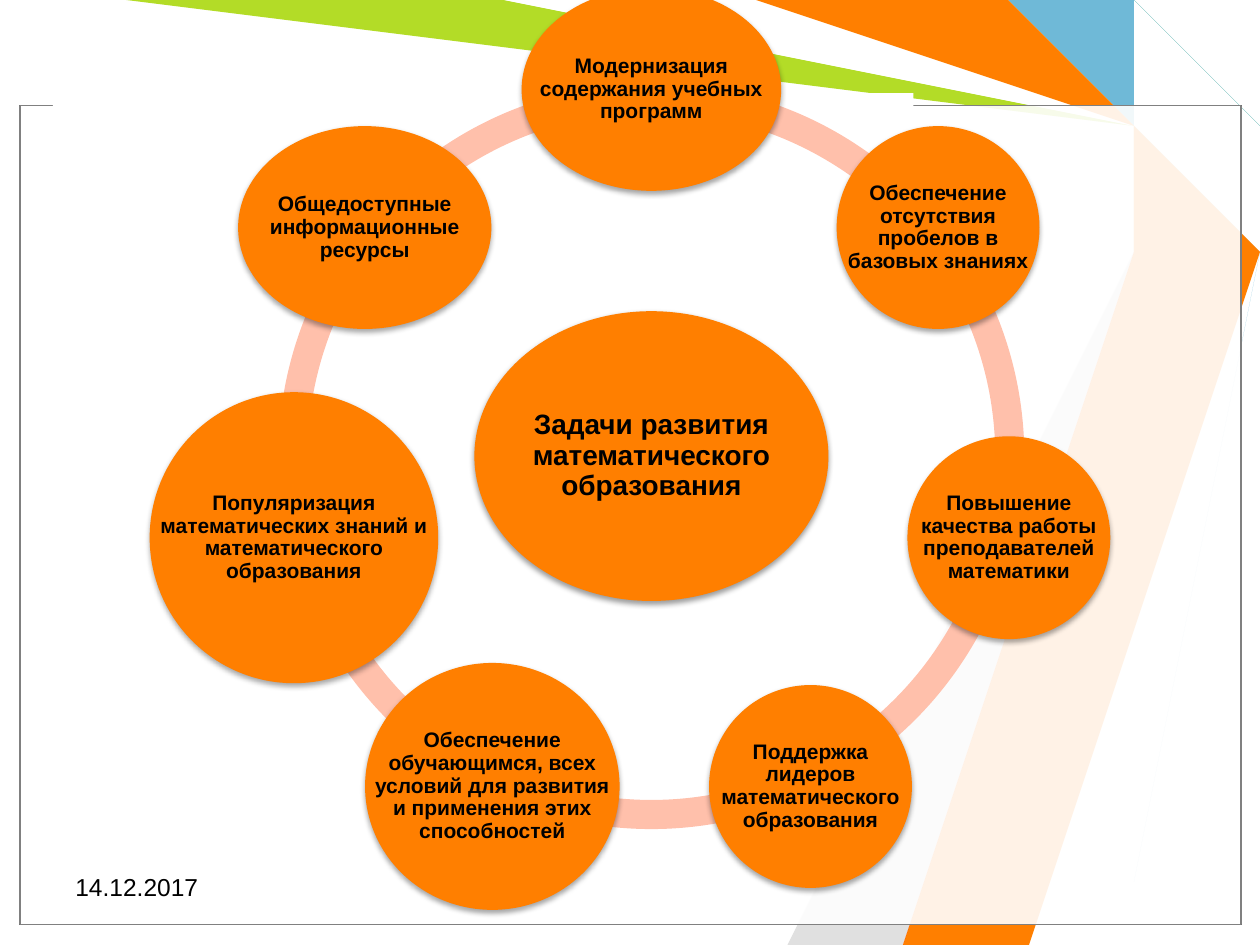
from math import cos, pi, sin

from lxml.etree import SubElement as Sub
from pptx import Presentation
from pptx.dml.color import RGBColor as Rgb
from pptx.enum.shapes import MSO_SHAPE as Form
from pptx.enum.text import MSO_ANCHOR as Anchor, PP_ALIGN as Align
from pptx.oxml.ns import qn
from pptx.util import Inches, Pt

COLS, ROWS = 10, 7.5
UNIT = Inches(1)
MID = (5.17, 3.62)
RING = 2.91
HUES = {
    "blue": "6FB9D7", "lime": "B3DC27", "gray": "E0E0E0", "white": "FFFFFF",
    "ice": "B4E3EE", "teal": "189180", "orange": "FF7F00", "red": "F93D17",
    "black": "000000", "edge": "808080", "peach": "FFC0AB",
}
RAYS = [
    ("blue", [(8.92, 0), (9.29, 0.77), (9.58, 1.67), (9.11, 7.49),
              (8.56, 7.49), (9.5, 1.67), (9.17, 0.75), (8.38, 0)]),
    ("lime", [(1.17, 0), (3.83, 0), (9.14, 0.78), (9.42, 1.69),
              (7.42, ROWS), (6.92, ROWS), (9.35, 1.73), (9.01, 0.91)]),
    ("gray", [(6.67, ROWS), (9.27, 1.81), (6, ROWS)]),
    ("white", [(3.75, 0), (9.1, 0.82), (9.32, 1.62), (6.75, ROWS),
               (7, ROWS), (9.41, 1.58), (9.17, 0.75), (6, 0)]),
    ("ice", [(9.25, 0), (9.17, 0.17), (9.78, 1.2), (COLS, 1.25),
             (COLS, 1), (9.25, 0.17), (9.32, 0)]),
    ("teal", [(COLS, 0.83), (9.42, 0.25), (COLS, 0.67)]),
    ("orange", [(6.08, 0), (7.92, 0), (9.3, 0.7), (9.66, 1.69),
                (8.33, ROWS), (7.33, ROWS), (9.42, 1.58), (9.17, 0.75)]),
    ("red", [(7.32, ROWS), (9.32, 1.83), (7.49, ROWS)]),
]
HUB = "Задачи развития математического образования"
TASKS = [
    ("Модернизация содержания учебных программ", 2.06, 1.61),
    ("Обеспечение отсутствия пробелов в базовых знаниях", 1.61, 1.61),
    ("Повышение качества работы преподавателей математики", 1.61, 1.61),
    ("Поддержка лидеров математического образования", 1.61, 1.61),
    ("Обеспечение обучающимся, всех условий для развития и применения "
     "этих способностей", 2.02, 1.96),
    ("Популяризация математических знаний и математического образования",
     2.29, 2.31),
    ("Общедоступные информационные ресурсы", 2.01, 1.61),
]


def hue(name):
    """Return the named colour."""
    return Rgb.from_string(HUES[name])


def grid(*cells):
    """Turn grid columns and rows into lengths."""
    return [int(cell * UNIT) for cell in cells]


def paint(shape, fill, line=None):
    """Set a flat fill and an optional thin outline."""
    shape.shadow.inherit = False
    shape.fill.solid()
    shape.fill.fore_color.rgb = hue(fill)
    if line:
        shape.line.color.rgb = hue(line)
        shape.line.width = Pt(0.75)
    else:
        shape.line.fill.background()
    return shape


def add(slide, form, area, fill, line=None):
    """Add a painted preset shape."""
    return paint(slide.shapes.add_shape(form, *grid(*area)), fill, line)


def ray(slide, fill, spots):
    """Draw one closed polygon."""
    pen = slide.shapes.build_freeform(*spots[0], scale=UNIT)
    pen.add_line_segments(spots[1:], close=True)
    paint(pen.convert_to_shape(), fill)


def veil(slide, line):
    """Add a see-through white frame."""
    pane = add(slide, Form.RECTANGLE, (0.16, 0.84, 9.69, 6.5), "white", line)
    tint = next(pane.fill._xPr.iter(qn("a:srgbClr")))
    Sub(tint, qn("a:alpha"), val="69000")


def shade(shape, blur, dist, alpha):
    """Drop a soft shadow straight down."""
    list_ = shape._element.spPr.find(qn("a:effectLst"))
    drop = Sub(list_, qn("a:outerShdw"), blurRad=str(Pt(blur)),
               dist=str(Pt(dist)), dir="5400000", rotWithShape="0")
    tint = Sub(drop, qn("a:srgbClr"), val=HUES["black"])
    Sub(tint, qn("a:alpha"), val=str(alpha * 1000))


def write(slide, text, area, size, bold=False):
    """Add a wrapped text box and return its frame."""
    frame = slide.shapes.add_textbox(*grid(*area)).text_frame
    frame.word_wrap = True
    para = frame.paragraphs[0]
    para.text = text
    look = {"name": "Arial", "size": Pt(size), "bold": bold}
    for key, val in look.items():
        setattr(para.font, key, val)
    para.font.color.rgb = hue("black")
    return frame


def node(slide, text, spot, wide, high, size=12, dist=1.8, alpha=35):
    """Add a shaded ellipse with a centred label."""
    area = (spot[0] - wide / 2, spot[1] - high / 2, wide, high)
    shade(add(slide, Form.OVAL, area, "orange"), 3.1, dist, alpha)
    frame = write(slide, text, area, size, True)
    frame.vertical_anchor = Anchor.MIDDLE
    for side in ("left", "right", "top", "bottom"):
        setattr(frame, f"margin_{side}", Inches(0.02))
    para = frame.paragraphs[0]
    para.alignment = Align.CENTER
    para.line_spacing = 0.9


def arc(slide, step):
    """Add the ring part that follows a node."""
    out = RING + 0.05
    area = (MID[0] - out, MID[1] - out, 2 * out, 2 * out)
    part = add(slide, Form.BLOCK_ARC, area, "peach")
    for i in (0, 1):
        turn = (270 + (step + i) * 360 / len(TASKS)) % 360
        part.adjustments[i] = turn * 0.6
    part.adjustments[2] = 0.039


def wheel(slide):
    """Draw the ring, the hub and the tasks around it."""
    count = len(TASKS)
    for step in range(count):
        arc(slide, step)
    node(slide, HUB, MID, 2.81, 2.3, 16, 1.6, 38)
    for step, (text, wide, high) in enumerate(TASKS):
        turn = 2 * pi * step / count
        spot = (MID[0] + RING * sin(turn), MID[1] - RING * cos(turn))
        node(slide, text, spot, wide, high)


def main():
    """Build the slide and save it."""
    deck = Presentation()
    deck.slide_width, deck.slide_height = grid(COLS, ROWS)
    slide = deck.slides.add_slide(deck.slide_layouts[6])
    for fill, spots in RAYS:
        ray(slide, fill, spots)
    for line in ("black", "edge"):
        veil(slide, line)
    add(slide, Form.RECTANGLE, (0.42, 0.74, 6.83, 0.17), "white")
    write(slide, "14.12.2017", (0.5, 6.87, 2.33, 0.33), 14)
    wheel(slide)
    deck.save("out.pptx")


if __name__ == "__main__":
    main()
